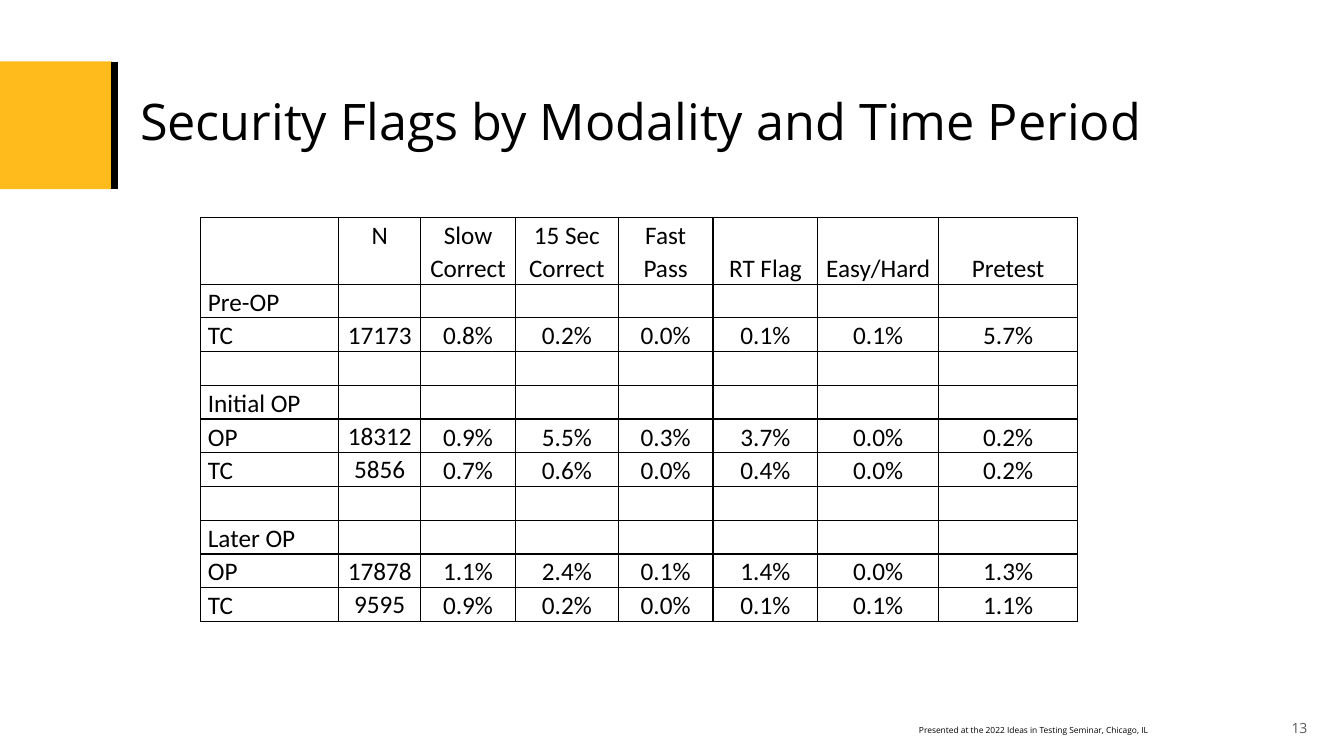
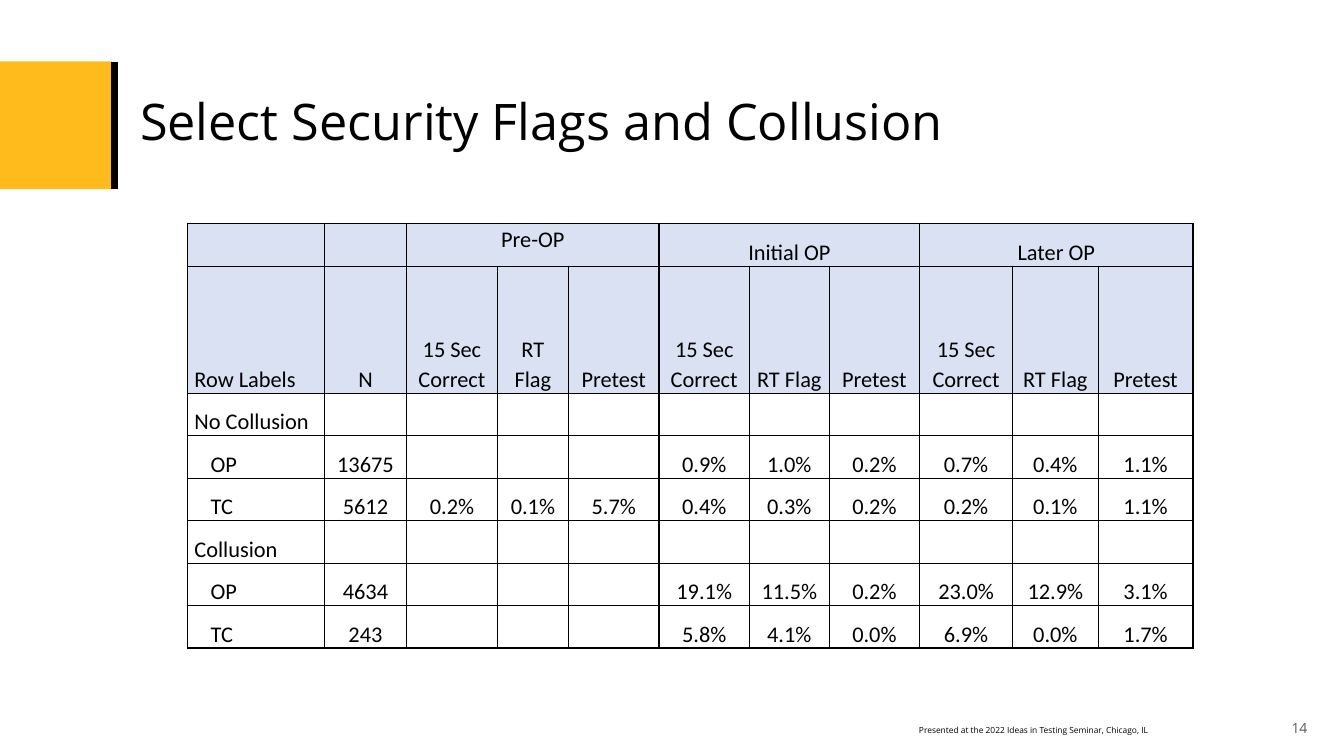
import pptx
import pptx.dml.color
import pptx.enum.shapes
import pptx.enum.text
import pptx.oxml
import pptx.oxml.ns
import pptx.util
from lxml import etree

Cm, Pt = pptx.util.Cm, pptx.util.Pt
ALIGN = pptx.enum.text.PP_ALIGN
ANCHOR = pptx.enum.text.MSO_ANCHOR

COLORS = {"accent": "FFBA1C", "ink": "000000", "number": "595959", "header": "D9E1F2"}
HEADING_FONT, TABLE_FONT = "Open Sans", "Calibri"
FOOTER = "Presented at the 2022 Ideas in Testing Seminar, Chicago, IL"

# Boxes: left, top, width, height in cm
BAND_BOX = (0, 1.55, 2.82, 3.22)
TITLE_BOX = (3.28, 1.57, 27.69, 3.1)
FOOTER_BOX = (22.91, 18.14, 9.47, 0.5)
NUMBER_BOX = (32.08, 17.83, 1.12, 1.02)

FLAG_ROWS = [
    ["", "N", "Slow Correct", "15 Sec Correct", "Fast Pass", "RT Flag", "Easy/Hard", "Pretest"],
    ["Pre-OP"],
    ["TC", "17173", "0.8%", "0.2%", "0.0%", "0.1%", "0.1%", "5.7%"],
    [],
    ["Initial OP"],
    ["OP", "18312", "0.9%", "5.5%", "0.3%", "3.7%", "0.0%", "0.2%"],
    ["TC", "5856", "0.7%", "0.6%", "0.0%", "0.4%", "0.0%", "0.2%"],
    [],
    ["Later OP"],
    ["OP", "17878", "1.1%", "2.4%", "0.1%", "1.4%", "0.0%", "1.3%"],
    ["TC", "9595", "0.9%", "0.2%", "0.0%", "0.1%", "0.1%", "1.1%"],
]
FLAG_COLUMNS = [3.48, 2.06, 2.39, 2.59, 2.39, 2.64, 3.04, 3.51]

MEASURES = ["15 Sec Correct", "RT Flag", "Pretest"]
COLLUSION_ROWS = [
    ["", "", "Pre-OP", "", "", "Initial OP", "", "", "Later OP"],
    ["Row Labels", "N"] + MEASURES * 3,
    ["No Collusion"],
    ["OP", "13675", "", "", "", "0.9%", "1.0%", "0.2%", "0.7%", "0.4%", "1.1%"],
    ["TC", "5612", "0.2%", "0.1%", "5.7%", "0.4%", "0.3%", "0.2%", "0.2%", "0.1%", "1.1%"],
    ["Collusion"],
    ["OP", "4634", "", "", "", "19.1%", "11.5%", "0.2%", "23.0%", "12.9%", "3.1%"],
    ["TC", "243", "", "", "", "5.8%", "4.1%", "0.0%", "6.9%", "0.0%", "1.7%"],
]
COLLUSION_COLUMNS = [3.45, 2.08, 2.28, 1.8, 2.28, 2.28, 2.01, 2.28, 2.34, 2.16, 2.39]


def rgb(name):
    return pptx.dml.color.RGBColor.from_string(COLORS[name])


def style_text(paragraph, font, size, color="ink", align=ALIGN.LEFT):
    paragraph.alignment = align
    for run in paragraph.runs:
        run.font.name = font
        run.font.size = Pt(size)
        run.font.color.rgb = rgb(color)


def add_label(slide, box, text, size, color="ink", align=ALIGN.LEFT, anchor=ANCHOR.MIDDLE):
    frame = slide.shapes.add_textbox(*map(Cm, box)).text_frame
    frame.word_wrap = True
    frame.vertical_anchor = anchor
    frame.text = text
    style_text(frame.paragraphs[0], HEADING_FONT, size, color, align)
    return frame.paragraphs[0]


def add_band(slide, box):
    left, top, width, height = box
    block = slide.shapes.add_shape(pptx.enum.shapes.MSO_SHAPE.RECTANGLE, *map(Cm, box))
    block.shadow.inherit = False
    block.fill.solid()
    block.fill.fore_color.rgb = rgb("accent")
    block.line.fill.background()
    # Black rule along the right edge
    edge = Cm(left + width + 0.06)
    rule = slide.shapes.add_connector(
        pptx.enum.shapes.MSO_CONNECTOR.STRAIGHT, edge, Cm(top), edge, Cm(top + height - 0.02))
    rule.line.color.rgb = rgb("ink")
    rule.line.width = Pt(5)
    etree.SubElement(rule._element.spPr, pptx.oxml.ns.qn("a:effectLst"))


def add_content_slide(deck, title, number):
    slide = deck.slides.add_slide(deck.slide_layouts[6])
    add_band(slide, BAND_BOX)
    add_label(slide, FOOTER_BOX, FOOTER, 6, anchor=ANCHOR.TOP)
    add_label(slide, TITLE_BOX, title, 36).line_spacing = 0.9
    add_label(slide, NUMBER_BOX, str(number), 10, "number", ALIGN.RIGHT)
    return slide


def set_borders(cell):
    properties = cell._tc.get_or_add_tcPr()
    for side in ("lnL", "lnR", "lnT", "lnB"):
        properties.append(pptx.oxml.parse_xml(
            f'<a:{side} {pptx.oxml.ns.nsdecls("a")} w="{Pt(1)}"><a:solidFill>'
            f'<a:srgbClr val="{COLORS["ink"]}"/></a:solidFill></a:{side}>'))


def add_grid(slide, position, columns, heights, rows, size, header_rows=0, top_cells=(),
             space_after=0, indented=()):
    """Place a ruled table; top_cells lists the (row, column) cells anchored at the top."""
    left, top = position
    table = slide.shapes.add_table(
        len(rows), len(columns), Cm(left), Cm(top), Cm(sum(columns)), Cm(sum(heights))).table
    table.first_row = table.horz_banding = False
    for column, width in zip(table.columns, columns):
        column.width = Cm(width)
    for r, (texts, height) in enumerate(zip(rows, heights)):
        table.rows[r].height = Cm(height)
        for c in range(len(columns)):
            cell = table.cell(r, c)
            set_borders(cell)
            if r < header_rows:
                cell.fill.solid()
                cell.fill.fore_color.rgb = rgb("header")
            else:
                cell.fill.background()
            cell.margin_left = cell.margin_right = Cm(0.18)
            cell.margin_top = cell.margin_bottom = 0
            cell.vertical_anchor = ANCHOR.TOP if (r, c) in top_cells else ANCHOR.BOTTOM
            if c >= len(texts) or not texts[c]:
                continue
            cell.text_frame.text = texts[c]
            paragraph = cell.text_frame.paragraphs[0]
            paragraph.line_spacing = 1.07
            paragraph.space_after = Pt(space_after)
            style_text(paragraph, TABLE_FONT, size, align=ALIGN.CENTER if c else ALIGN.LEFT)
            if c == 0 and texts[c] in indented:
                paragraph.space_after = Pt(0)
                paragraph._p.get_or_add_pPr().set("indent", str(Cm(0.41)))
    return table


def build_flags_slide(deck):
    slide = add_content_slide(deck, "Security Flags by Modality and Time Period", 13)
    add_grid(slide, (5.06, 5.49), FLAG_COLUMNS, [1.67] + [0.85] * 10, FLAG_ROWS, 18,
             top_cells=[(r, 1) for r in range(len(FLAG_ROWS))])


def build_collusion_slide(deck):
    slide = add_content_slide(deck, "Select Security Flags and Collusion", 14)
    table = add_grid(slide, (4.72, 5.64), COLLUSION_COLUMNS, [1.07, 3.2] + [1.07] * 6,
                     COLLUSION_ROWS, 16, header_rows=2, top_cells=[(0, 2)],
                     space_after=8, indented=("OP", "TC"))
    # Each period heading spans its measures
    for first in range(2, len(COLLUSION_COLUMNS), len(MEASURES)):
        table.cell(0, first).merge(table.cell(0, first + len(MEASURES) - 1))


def main():
    deck = pptx.Presentation()
    deck.slide_width, deck.slide_height = Cm(33.87), Cm(19.05)
    build_flags_slide(deck)
    build_collusion_slide(deck)
    deck.save("out.pptx")


if __name__ == "__main__":
    main()
